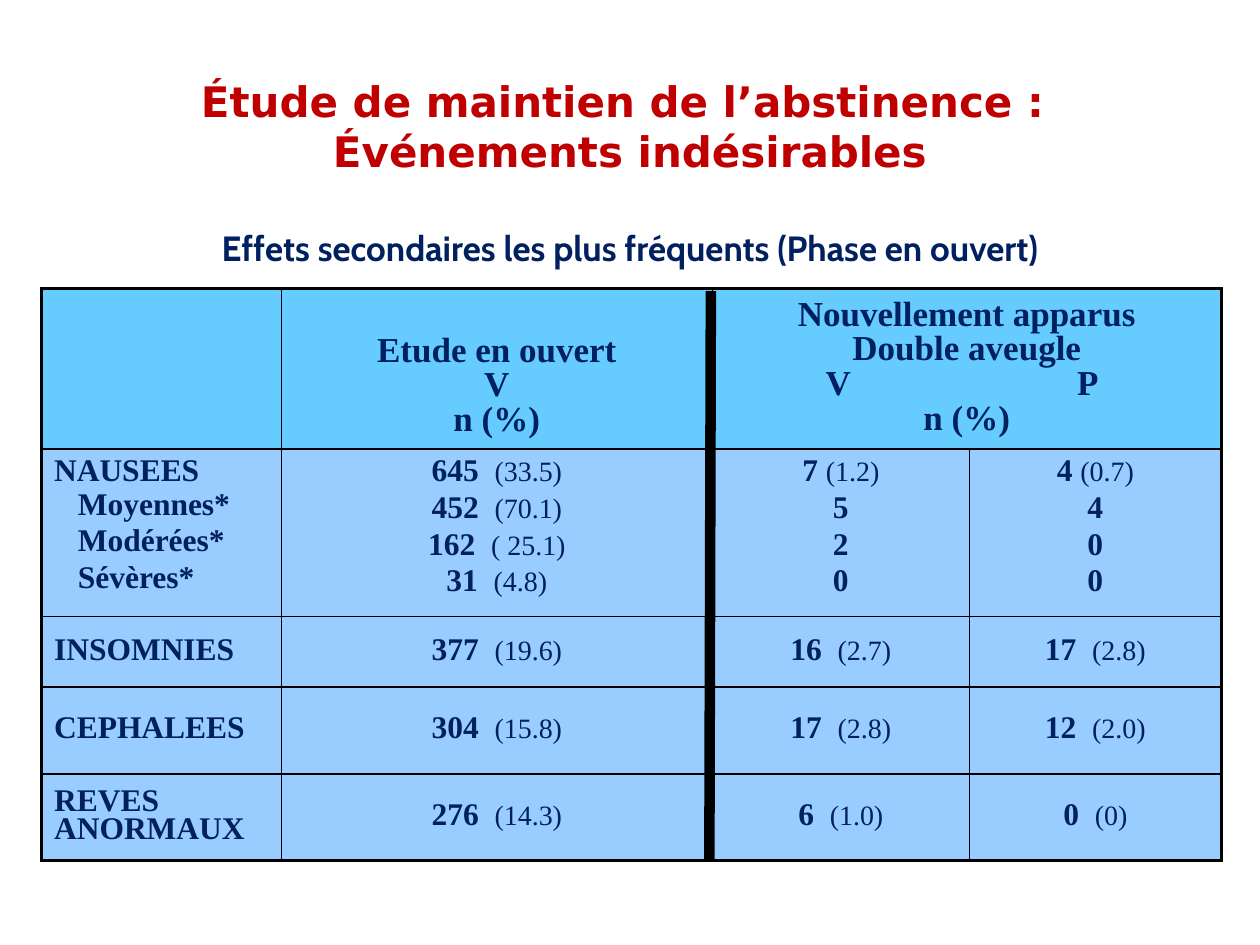
from dataclasses import dataclass

from lxml.etree import SubElement
from pptx import Presentation
from pptx.dml.color import RGBColor
from pptx.enum.shapes import MSO_CONNECTOR
from pptx.enum.text import MSO_ANCHOR as Anchor, PP_ALIGN as Align
from pptx.oxml.ns import qn
from pptx.util import Cm, Pt

NAVY, RED, BLACK = "002060", "C00000", "000000"
HEADER_BLUE, BODY_BLUE = "66CCFF", "99CCFF"
SERIF = "Times New Roman"
COLUMNS = (4.83, 8.69, 5.18, 5.08)
ROWS = (3.23, 3.38, 1.42, 1.75, 1.75)


@dataclass(frozen=True)
class Span:
    text: str
    size: float = 18
    bold: bool = True
    font: str = SERIF
    color: str = NAVY


@dataclass(frozen=True)
class Line:
    spans: tuple[Span, ...]
    align: Align = Align.CENTER
    spacing: float = 0.8
    before: float = 2
    indent: float = 0
    tabs: tuple[float, ...] = ()


@dataclass(frozen=True)
class Entry:
    lines: tuple[Line, ...] = ()
    anchor: Anchor = Anchor.MIDDLE
    top: float = 0.13


def rgb(color: str) -> RGBColor:
    return RGBColor.from_string(color)


def write(frame, lines: tuple[Line, ...]) -> None:
    for index, line in enumerate(lines):
        paragraph = frame.add_paragraph() if index else frame.paragraphs[0]
        paragraph.alignment = line.align
        paragraph.line_spacing = line.spacing
        paragraph.space_before = Pt(line.before if index else 0)
        properties = paragraph._p.get_or_add_pPr()
        if line.indent:
            properties.set("marL", str(Cm(line.indent)))
        if line.tabs:
            stops = SubElement(properties, qn("a:tabLst"))
            for position in line.tabs:
                SubElement(stops, qn("a:tab"), pos=str(Cm(position)), algn="ctr")
        for span in line.spans:
            run = paragraph.add_run()
            run.text = span.text
            run.font.size = Pt(span.size)
            run.font.bold = span.bold
            run.font.name = span.font
            run.font.color.rgb = rgb(span.color)


def add_text(slide, left: float, top: float, width: float, height: float,
             lines: tuple[Line, ...]) -> None:
    frame = slide.shapes.add_textbox(Cm(left), Cm(top), Cm(width), Cm(height)).text_frame
    frame.word_wrap = True
    frame.vertical_anchor = Anchor.MIDDLE
    write(frame, lines)


def set_borders(cell, row: int, column: int) -> None:
    last_column = column + cell.span_width == len(COLUMNS)
    outer = {"lnL": column == 0, "lnR": last_column,
             "lnT": row == 0, "lnB": row == len(ROWS) - 1}
    for side, is_outer in outer.items():
        border = SubElement(cell._tc.get_or_add_tcPr(), qn(f"a:{side}"),
                            w=str(Pt(2.25 if is_outer else 1)))
        SubElement(SubElement(border, qn("a:solidFill")), qn("a:srgbClr"), val=BLACK)


def header(*texts: str, top: float = 0.13) -> Entry:
    return Entry(tuple(Line((Span(text, 20),)) for text in texts), top=top)


def label(text: str) -> Entry:
    return Entry((Line((Span(text),), Align.LEFT),))


def count_line(count: str, share: str = "", spacing: float = 0.8) -> Line:
    spans = (Span(count), Span(share, 16, False)) if share else (Span(count),)
    return Line(spans, spacing=spacing)


def counts(*values: tuple[str, ...]) -> Entry:
    return Entry(tuple(count_line(*value, spacing=0.95) for value in values), Anchor.TOP)


def count(number: str, share: str) -> Entry:
    return Entry((count_line(number, share),))


def nausea_line(text: str, indent: float = 0.48, before: float = 2) -> Line:
    return Line((Span(text),), Align.LEFT, 0.95, before, indent)


DOUBLE_BLIND = Entry((
    Line((Span("Nouvellement apparus", 20),)),
    Line((Span("Double aveugle", 20),)),
    Line((Span("\tV\tP", 20),), Align.LEFT, tabs=(2.29, 7.32)),
    Line((Span("n (%)", 20),)),
))
NAUSEA = Entry((
    nausea_line("NAUSEES", indent=0),
    nausea_line("Moyennes*", before=0),
    nausea_line("Modérées*"),
    nausea_line("Sévères*"),
), Anchor.TOP)
ENTRIES = (
    (Entry(), header("Etude en ouvert", "V", "n (%)", top=0.88), DOUBLE_BLIND, Entry()),
    (NAUSEA,
     counts(("645  ", "(33.5)"), ("452  ", "(70.1)"), ("162  ", "( 25.1)"), ("31  ", "(4.8)")),
     counts(("7 ", "(1.2)"), ("5",), ("2",), ("0",)),
     counts(("4 ", "(0.7)"), ("4",), ("0",), ("0",))),
    (label("INSOMNIES"), count("377  ", "(19.6)"), count("16  ", "(2.7)"), count("17  ", "(2.8)")),
    (label("CEPHALEES"), count("304  ", "(15.8)"), count("17  ", "(2.8)"), count("12  ", "(2.0)")),
    (label("REVES ANORMAUX"), count("276  ", "(14.3)"), count("6  ", "(1.0)"), count("0  ", "(0)")),
)


def add_effects_table(slide) -> None:
    table = slide.shapes.add_table(len(ROWS), len(COLUMNS), Cm(0.84), Cm(5.82),
                                   Cm(sum(COLUMNS)), Cm(sum(ROWS))).table
    table.first_row = table.horz_banding = False
    for column, width in zip(table.columns, COLUMNS):
        column.width = Cm(width)
    for row, height in zip(table.rows, ROWS):
        row.height = Cm(height)
    table.cell(0, 2).merge(table.cell(0, 3))
    for row, entries in enumerate(ENTRIES):
        for column, entry in enumerate(entries):
            cell = table.cell(row, column)
            set_borders(cell, row, column)
            cell.fill.solid()
            cell.fill.fore_color.rgb = rgb(BODY_BLUE if row else HEADER_BLUE)
            cell.vertical_anchor = entry.anchor
            cell.margin_left = cell.margin_right = Cm(0.25)
            cell.margin_top, cell.margin_bottom = Cm(entry.top), Cm(0.13)
            write(cell.text_frame, entry.lines)


def add_divider(slide) -> None:
    divider = slide.shapes.add_connector(MSO_CONNECTOR.STRAIGHT,
                                         Cm(14.3), Cm(17.32), Cm(14.33), Cm(5.87))
    divider.line.width = Pt(6)
    divider.line.color.rgb = rgb(BLACK)
    SubElement(divider._element.spPr, qn("a:effectLst"))


def main() -> None:
    presentation = Presentation()
    presentation.slide_width, presentation.slide_height = Cm(25.4), Cm(19.05)
    slide = presentation.slides.add_slide(presentation.slide_layouts[6])
    title = ("Étude de maintien de l’abstinence : ", "Événements indésirables")
    add_text(slide, 1.37, 1.32, 22.66, 2.44, tuple(
        Line((Span(text, 24, font="DejaVu Sans", color=RED),), spacing=1, before=0)
        for text in title))
    add_effects_table(slide)
    add_divider(slide)
    subtitle = Span("Effets secondaires les plus fréquents (Phase en ouvert)", 20, font="Cabin")
    add_text(slide, 0.74, 4.45, 23.93, 1.09, (Line((subtitle,), spacing=1),))
    presentation.save("out.pptx")


if __name__ == "__main__":
    main()
